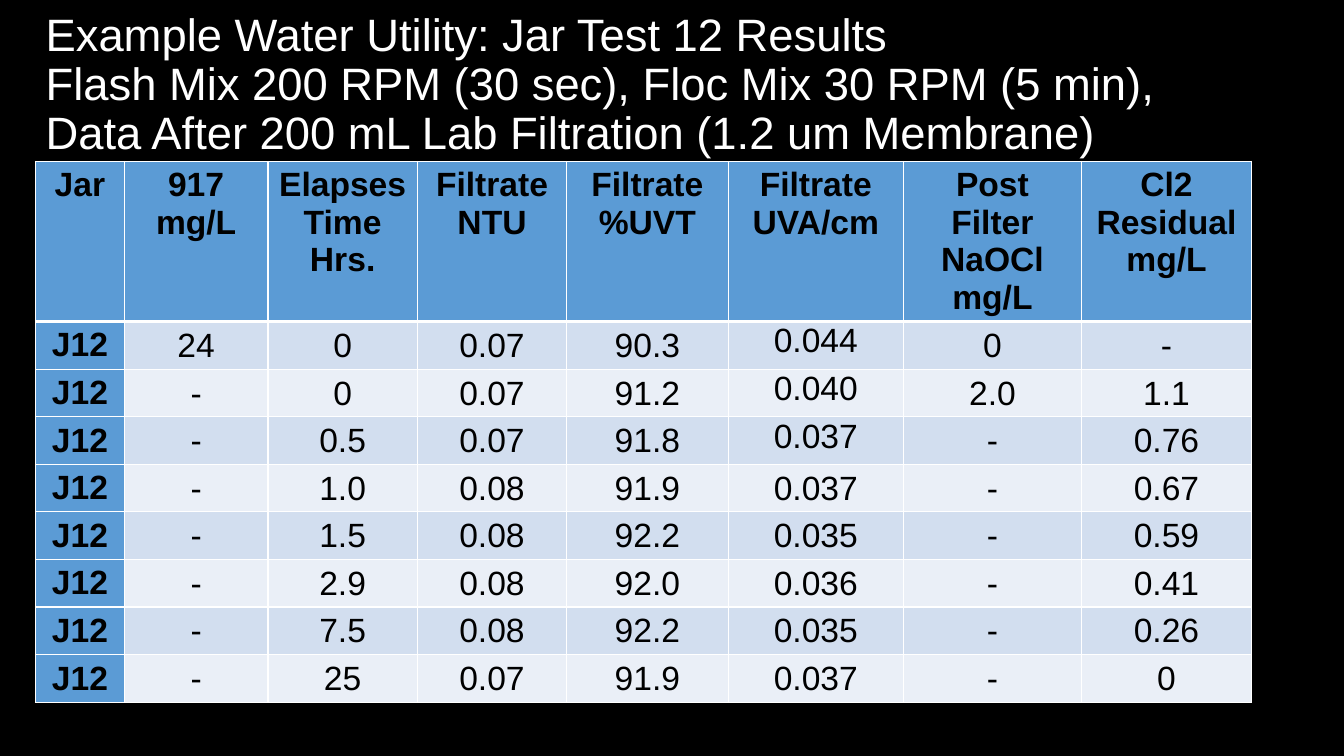
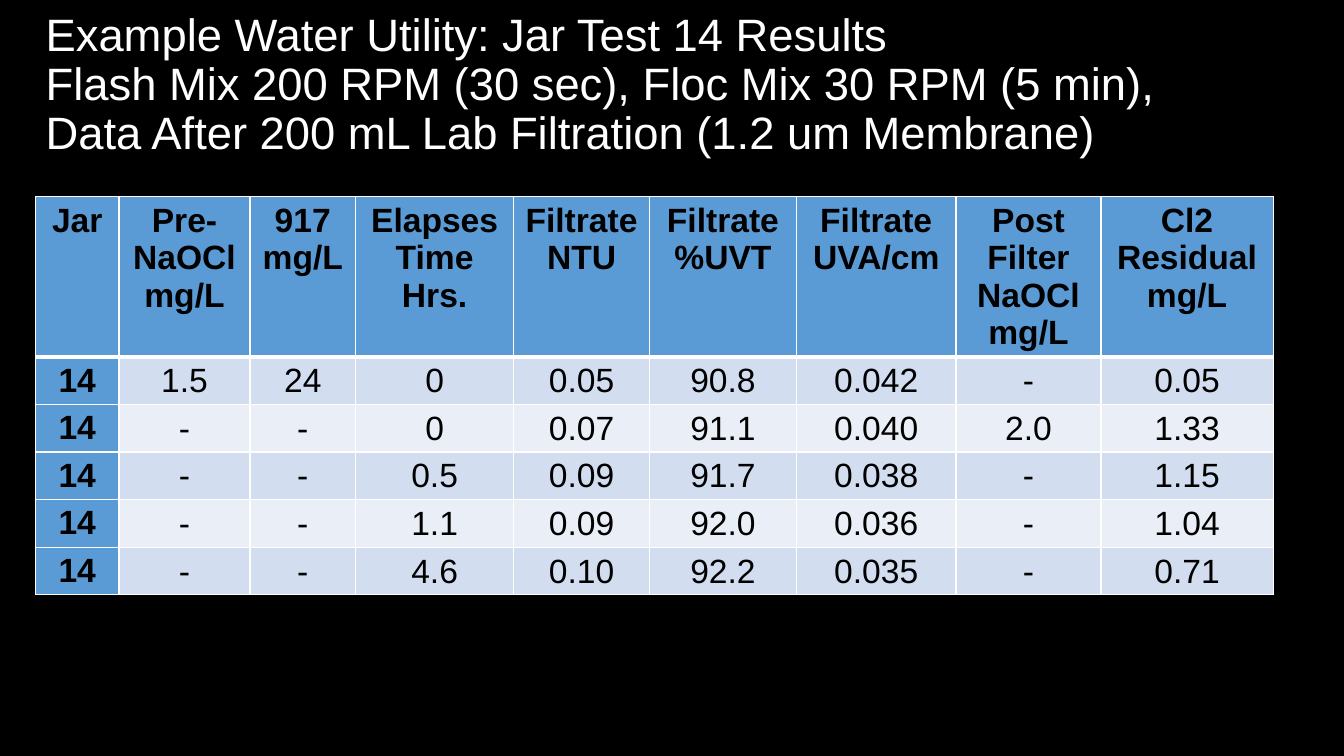
import pptx
import pptx.util
import pptx.dml.color
import pptx.enum.text
import pptx.oxml
import pptx.oxml.ns

Pt = pptx.util.Pt
RGBColor = pptx.dml.color.RGBColor
PP_ALIGN = pptx.enum.text.PP_ALIGN
MSO_ANCHOR = pptx.enum.text.MSO_ANCHOR

COLORS = {
    "background": "000000",
    "title": "FFFFFF",
    "text": "000000",
    "header": "5B9BD5",
    "odd row": "D2DEEF",
    "even row": "EAEFF7",
    "border": "FFFFFF",
}
FONT = "Arial"
LEFT = 25.4
TITLE_TOP, TITLE_WIDTH, TITLE_HEIGHT = 9, 868, 104.5
HEADER_HEIGHT, ROW_HEIGHT = 111, 32.5
CELL_INSET = 0.7

MIXING = ("Flash Mix 200 RPM (30 sec), Floc Mix 30 RPM (5 min), "
          "Data After 200 mL Lab Filtration (1.2 um Membrane)")
MEASURES = ["917\nmg/L", "Elapses\nTime\nHrs.", "Filtrate\nNTU", "Filtrate\n%UVT",
            "Filtrate\nUVA/cm", "Post Filter NaOCl\nmg/L", "Cl2\nResidual\nmg/L"]

# One entry per slide; raised cells (row, column) sit at the top of their row
JAR_TESTS = [
    {
        "heading": "Example Water Utility: Jar Test 12 Results",
        "top": 115.4,
        "widths": [63.4, 102.6, 106.8, 106.6, 115.4, 125.2, 127.2, 121.5],
        "headers": ["Jar"] + MEASURES,
        "jar": "J12",
        "raised": [(1, 5), (2, 5), (3, 5)],
        "rows": [
            ["24", "0", "0.07", "90.3", "0.044", "0", "-"],
            ["-", "0", "0.07", "91.2", "0.040", "2.0", "1.1"],
            ["-", "0.5", "0.07", "91.8", "0.037", "-", "0.76"],
            ["-", "1.0", "0.08", "91.9", "0.037", "-", "0.67"],
            ["-", "1.5", "0.08", "92.2", "0.035", "-", "0.59"],
            ["-", "2.9", "0.08", "92.0", "0.036", "-", "0.41"],
            ["-", "7.5", "0.08", "92.2", "0.035", "-", "0.26"],
            ["-", "25", "0.07", "91.9", "0.037", "-", "0"],
        ],
    },
    {
        "heading": "Example Water Utility: Jar Test 14 Results",
        "top": 140.6,
        "widths": [59.6, 93.6, 75.4, 113, 97, 105, 114, 103.5, 123],
        "headers": ["Jar", "Pre- NaOCl\nmg/L"] + MEASURES,
        "jar": "14",
        "raised": [],
        "rows": [
            ["1.5", "24", "0", "0.05", "90.8", "0.042", "-", "0.05"],
            ["-", "-", "0", "0.07", "91.1", "0.040", "2.0", "1.33"],
            ["-", "-", "0.5", "0.09", "91.7", "0.038", "-", "1.15"],
            ["-", "-", "1.1", "0.09", "92.0", "0.036", "-", "1.04"],
            ["-", "-", "4.6", "0.10", "92.2", "0.035", "-", "0.71"],
        ],
    },
]


def style_font(paragraph, size, color, bold=False):
    paragraph.font.name = FONT
    paragraph.font.size = Pt(size)
    paragraph.font.bold = bold
    paragraph.font.color.rgb = RGBColor.from_string(COLORS[color])


def add_borders(cell, top, bottom):
    """Draw the four cell borders; call before the cell is filled."""
    properties = cell._tc.get_or_add_tcPr()
    for side, width in (("L", 1), ("R", 1), ("T", top), ("B", bottom)):
        properties.append(pptx.oxml.parse_xml(
            f'<a:ln{side} {pptx.oxml.ns.nsdecls("a")} w="{Pt(width)}">'
            f'<a:solidFill><a:srgbClr val="{COLORS["border"]}"/></a:solidFill>'
            f'</a:ln{side}>'))


presentation = pptx.Presentation()
presentation.slide_width = Pt(960)
presentation.slide_height = Pt(540)

# Shared background and title position
background = presentation.slide_master.background.fill
background.solid()
background.fore_color.rgb = RGBColor.from_string(COLORS["background"])
layout = presentation.slide_layouts.get_by_name("Title Only")
layout_title = layout.placeholders[0]
layout_title.left, layout_title.top = Pt(LEFT), Pt(TITLE_TOP)
layout_title.width, layout_title.height = Pt(TITLE_WIDTH), Pt(TITLE_HEIGHT)

for test in JAR_TESTS:
    slide = presentation.slides.add_slide(layout)

    # Title
    text_frame = slide.shapes.title.text_frame
    text_frame.auto_size = pptx.enum.text.MSO_AUTO_SIZE.NONE
    text_frame.vertical_anchor = MSO_ANCHOR.MIDDLE
    paragraph = text_frame.paragraphs[0]
    paragraph.add_run().text = test["heading"]
    paragraph.add_line_break()
    paragraph.add_run().text = MIXING
    paragraph.alignment = PP_ALIGN.LEFT
    paragraph.line_spacing = 0.9
    style_font(paragraph, 32.4, "title")

    # Table grid
    grid = [test["headers"]] + [[test["jar"]] + row for row in test["rows"]]
    heights = [HEADER_HEIGHT] + [ROW_HEIGHT] * len(test["rows"])
    table = slide.shapes.add_table(
        len(grid), len(test["widths"]), Pt(LEFT), Pt(test["top"]),
        Pt(sum(test["widths"])), Pt(sum(heights))).table
    table.first_col = True
    table.horz_banding = False
    for column, width in zip(table.columns, test["widths"]):
        column.width = Pt(width)
    for row, height in zip(table.rows, heights):
        row.height = Pt(height)

    # Table cells
    for row_index, values in enumerate(grid):
        band = "odd row" if row_index % 2 else "even row"
        for column_index, value in enumerate(values):
            cell = table.cell(row_index, column_index)
            is_header = row_index == 0 or column_index == 0
            add_borders(cell, top=3 if row_index == 1 else 1,
                        bottom=3 if row_index == 0 else 1)
            cell.fill.solid()
            cell.fill.fore_color.rgb = RGBColor.from_string(
                COLORS["header" if is_header else band])
            if not is_header:
                cell.margin_left = cell.margin_right = cell.margin_top = Pt(CELL_INSET)
                cell.margin_bottom = 0
                if (row_index, column_index) not in test["raised"]:
                    cell.vertical_anchor = MSO_ANCHOR.MIDDLE
            cell.text = value
            for paragraph in cell.text_frame.paragraphs:
                paragraph.alignment = PP_ALIGN.CENTER
                style_font(paragraph, 24, "text", bold=is_header)

presentation.save("out.pptx")
